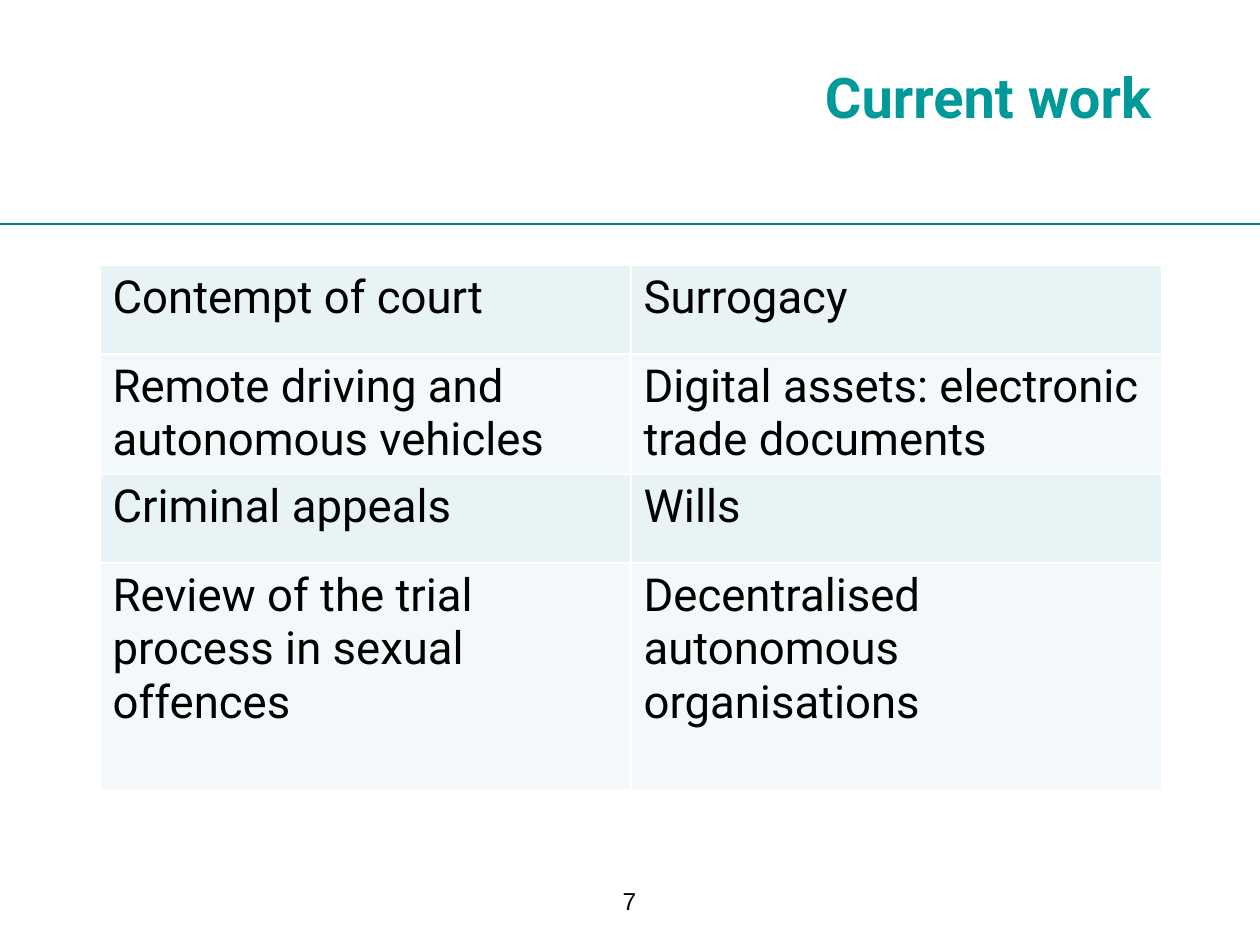
from dataclasses import dataclass

from lxml.etree import SubElement
from pptx import Presentation
from pptx.dml.color import RGBColor
from pptx.enum.shapes import MSO_CONNECTOR
from pptx.enum.text import MSO_ANCHOR, PP_ALIGN
from pptx.oxml import parse_xml
from pptx.oxml.ns import nsdecls, qn
from pptx.util import Pt

PX = 914400 / 126


@dataclass(frozen=True)
class Theme:
    heading_font: str = "Roboto"
    number_font: str = "Arial"
    title_size: int = 32
    table_size: int = 26
    number_size: int = 14
    title: str = "009999"
    rule: str = "008080"
    text: str = "000000"
    border: str = "FFFFFF"
    bands: tuple = ("E7F3F4", "F3F9FA")


THEME = Theme()

PROJECTS = [
    ("Contempt of court", "Surrogacy"),
    ("Remote driving and autonomous vehicles",
     "Digital assets: electronic trade documents"),
    ("Criminal appeals", "Wills"),
    ("Review of the trial process in sexual offences",
     "Decentralised autonomous organisations"),
]
ROW_HEIGHTS = [89, 120, 89, 227]


def emu(*lengths):
    return [round(length * PX) for length in lengths]


def write(frame, text, font, size, color, bold=False, align=PP_ALIGN.LEFT):
    frame.text = text
    frame.word_wrap = True
    para = frame.paragraphs[0]
    para.alignment = align
    for span in para.runs:
        span.font.name = font
        span.font.size = Pt(size)
        span.font.bold = bold
        span.font.color.rgb = RGBColor.from_string(color)


def add_rule(page, left, top, width):
    rule = page.shapes.add_connector(
        MSO_CONNECTOR.STRAIGHT, *emu(left, top, left + width, top))
    rule.line.color.rgb = RGBColor.from_string(THEME.rule)
    rule.line.width = Pt(0.75)
    SubElement(rule._element.spPr, qn("a:effectLst"))


def place_title(page, text, left, top, width, height):
    title = page.shapes.title
    title.left, title.top, title.width, title.height = emu(left, top, width, height)
    title.text_frame.vertical_anchor = MSO_ANCHOR.MIDDLE
    write(title.text_frame, text, THEME.heading_font, THEME.title_size,
          THEME.title, bold=True, align=PP_ALIGN.RIGHT)


def set_borders(cell, color, points):
    """Draw the same line on all four sides; lines must precede the fill."""
    properties = cell._tc.get_or_add_tcPr()
    for index, side in enumerate(("lnL", "lnR", "lnT", "lnB")):
        properties.insert(index, parse_xml(
            f'<a:{side} {nsdecls("a")} w="{Pt(points)}"><a:solidFill>'
            f'<a:srgbClr val="{color}"/></a:solidFill></a:{side}>'))


def add_project_table(page, projects, row_heights, left, top, width):
    columns = len(projects[0])
    box = page.shapes.add_table(
        len(projects), columns, *emu(left, top, width, sum(row_heights)))
    table = box.table
    table.first_row = table.horz_banding = False
    for column in table.columns:
        column.width = emu(width / columns)[0]
    for index, (names, height) in enumerate(zip(projects, row_heights)):
        row = table.rows[index]
        row.height = emu(height)[0]
        band = THEME.bands[index % len(THEME.bands)]
        for cell, name in zip(row.cells, names):
            write(cell.text_frame, name, THEME.heading_font,
                  THEME.table_size, THEME.text)
            cell.fill.solid()
            cell.fill.fore_color.rgb = RGBColor.from_string(band)
            set_borders(cell, THEME.border, 1)


def add_page_number(page, number, left, top, width, height):
    box = page.shapes.add_textbox(*emu(left, top, width, height))
    write(box.text_frame, str(number), THEME.number_font, THEME.number_size,
          THEME.text, align=PP_ALIGN.CENTER)


def main():
    deck = Presentation()
    deck.slide_width, deck.slide_height = emu(1260, 945)
    page = deck.slides.add_slide(deck.slide_layouts[5])
    add_rule(page, 0, 224, 1260)
    place_title(page, "Current work", 709, 18, 455, 157)
    add_project_table(page, PROJECTS, ROW_HEIGHTS, 100, 265, 1062)
    add_page_number(page, 7, 595, 880, 69, 39)
    deck.save("out.pptx")


if __name__ == "__main__":
    main()
